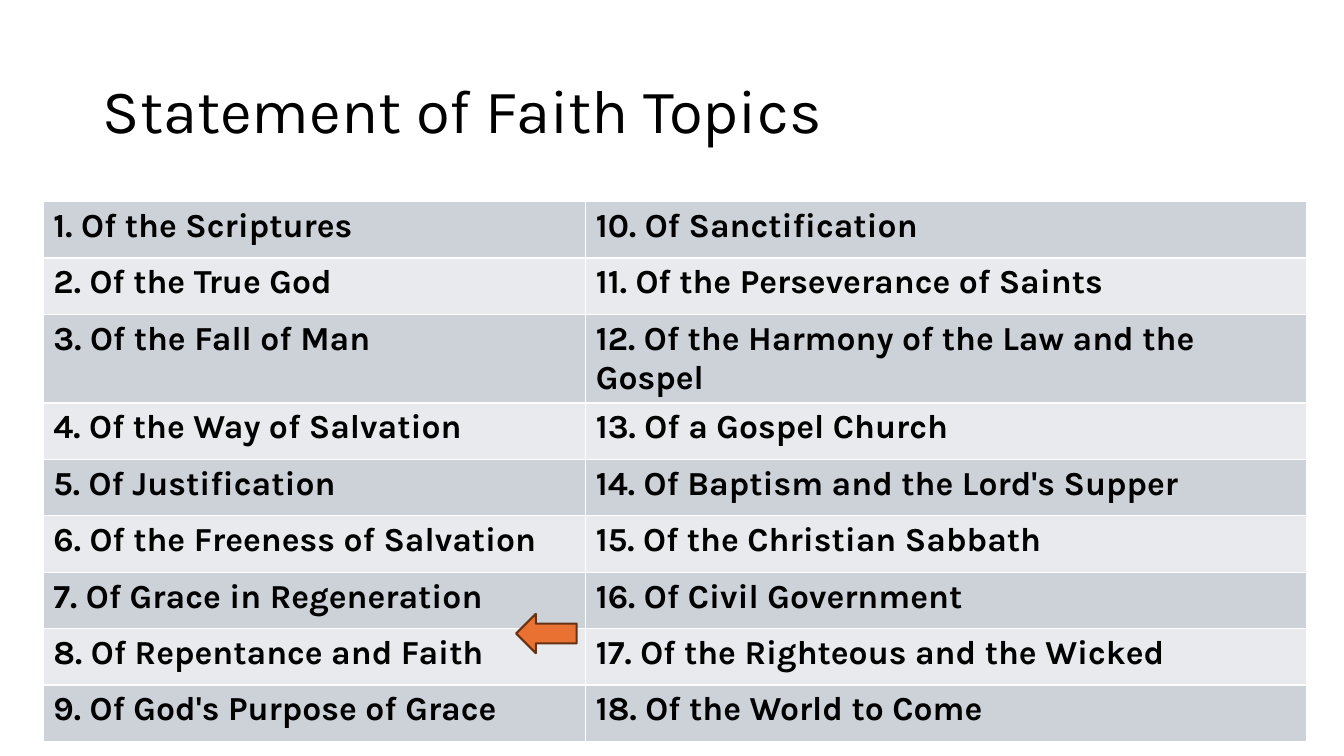
import pptx
import pptx.util
import pptx.dml.color
import pptx.enum.shapes
import pptx.enum.text
import pptx.oxml
import pptx.oxml.ns

RGB = pptx.dml.color.RGBColor
BLACK = RGB(0x00, 0x00, 0x00)
WHITE = RGB(0xFF, 0xFF, 0xFF)
BAND_DARK = RGB(0xCC, 0xD2, 0xD8)
BAND_LIGHT = RGB(0xE8, 0xEA, 0xED)
ORANGE = RGB(0xE9, 0x71, 0x32)
BROWN = RGB(0x66, 0x32, 0x16)

TOPICS = [
    "the Scriptures", "the True God", "the Fall of Man",
    "the Way of Salvation", "Justification", "the Freeness of Salvation",
    "Grace in Regeneration", "Repentance and Faith",
    "God's Purpose of Grace", "Sanctification",
    "the Perseverance of Saints", "the Harmony of the Law and the Gospel",
    "a Gospel Church", "Baptism and the Lord's Supper",
    "the Christian Sabbath", "Civil Government",
    "the Righteous and the Wicked", "the World to Come",
]


def px(n):
    """Convert px, 100 to the inch, to EMU."""
    return pptx.util.Emu(n * 9144)


class SlideBuilder:
    font = "Karla"

    def __init__(self, prs):
        self.s = prs.slides.add_slide(prs.slide_layouts[5])

    def style_text(self, p, size, bold=False):
        for r in p.runs:
            r.font.name = self.font
            r.font.size = pptx.util.Pt(size)
            r.font.bold = bold
            r.font.color.rgb = BLACK

    def title(self, text, x, y, w, h):
        sp = self.s.shapes.title
        sp.left, sp.top, sp.width, sp.height = px(x), px(y), px(w), px(h)
        tf = sp.text_frame
        tf.text = text
        tf.word_wrap = True
        tf.auto_size = pptx.enum.text.MSO_AUTO_SIZE.NONE
        tf.vertical_anchor = pptx.enum.text.MSO_ANCHOR.MIDDLE
        p = tf.paragraphs[0]
        p.alignment = pptx.enum.text.PP_ALIGN.LEFT
        p.line_spacing = 0.9
        self.style_text(p, 44)

    def border(self, cell, color, width):
        """Draw all four sides; the lines must come before the fill."""
        tc_pr = cell._tc.get_or_add_tcPr()
        for i, side in enumerate("LRTB"):
            ln = pptx.oxml.parse_xml(
                f'<a:ln{side} {pptx.oxml.ns.nsdecls("a")} w="{pptx.util.Pt(width)}">'
                f'<a:solidFill><a:srgbClr val="{color}"/></a:solidFill></a:ln{side}>')
            tc_pr.insert(i, ln)

    def table(self, columns, x, y, widths, heights):
        frame = self.s.shapes.add_table(len(heights), len(widths), px(x), px(y),
                                        px(sum(widths)), px(sum(heights)))
        table = frame.table
        for column, w in zip(table.columns, widths):
            column.width = px(w)
        for row, h in zip(table.rows, heights):
            row.height = px(h)
        for c, texts in enumerate(columns):
            for r, text in enumerate(texts):
                cell = table.cell(r, c)
                cell.text_frame.text = text
                self.style_text(cell.text_frame.paragraphs[0], 24, bold=True)
                cell.fill.solid()
                cell.fill.fore_color.rgb = BAND_LIGHT if r % 2 else BAND_DARK
                self.border(cell, WHITE, 1)

    def left_arrow(self, x, y, w, h):
        sp = self.s.shapes.add_shape(pptx.enum.shapes.MSO_SHAPE.LEFT_ARROW,
                                     px(x), px(y), px(w), px(h))
        sp.shadow.inherit = False
        sp.fill.solid()
        sp.fill.fore_color.rgb = ORANGE
        sp.line.color.rgb = BROWN
        sp.line.width = pptx.util.Pt(1.5)


def main():
    prs = pptx.Presentation()
    prs.slide_width, prs.slide_height = px(1333), px(750)
    slide = SlideBuilder(prs)
    slide.title("Statement of Faith Topics", 92, 40, 1150, 145)
    items = [f"{n}. Of {topic}" for n, topic in enumerate(TOPICS, 1)]
    half = len(items) // 2
    heights = [56] * half
    heights[2] = 62
    slide.table([items[:half], items[half:]], 43, 200, [538, 715], heights)
    slide.left_arrow(512, 609, 60, 39)
    prs.save("out.pptx")


if __name__ == "__main__":
    main()
